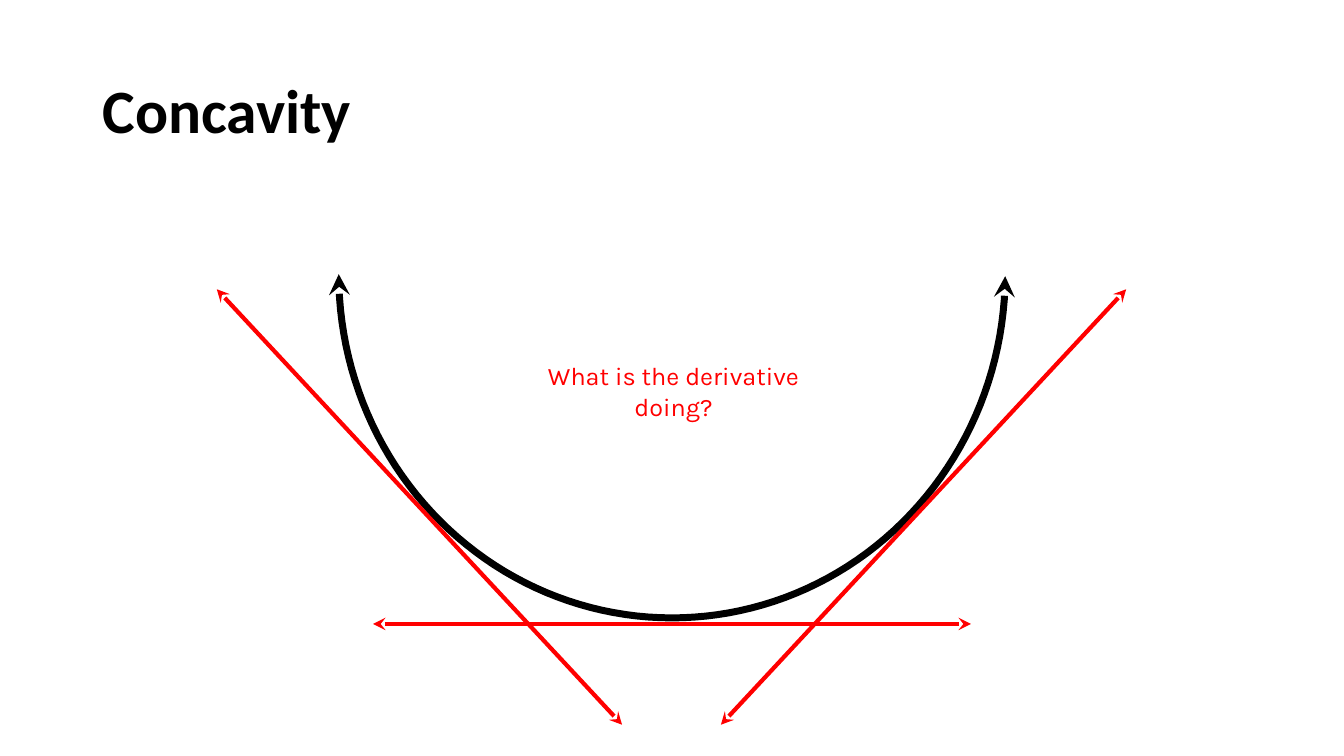
import math

import lxml.etree
import pptx
import pptx.dml.color
import pptx.enum.shapes
import pptx.enum.text
import pptx.oxml.ns
import pptx.util

Inches = pptx.util.Inches
BLACK = pptx.dml.color.RGBColor(0x00, 0x00, 0x00)
RED = pptx.dml.color.RGBColor(0xFF, 0x00, 0x00)

TITLE_FONT = {"name": "Calibri", "size": pptx.util.Pt(44), "bold": True}
QUESTION_FONT = {"name": "Karla", "size": pptx.util.Pt(18), "bold": False}

# Tangent lines inside the diagram box: (x1, y1, x2, y2)
TANGENTS = [
    (0, 0.15, 4.02, 4.47),
    (9.02, 0.15, 5.0, 4.47),
    (1.55, 3.47, 7.48, 3.47),
]


def add_text(slide, box, text, font_format, color, frame_format, paragraph_format):
    text_box = slide.shapes.add_textbox(*map(Inches, box))
    frame = text_box.text_frame
    paragraph = frame.paragraphs[0]
    run = paragraph.add_run()
    run.text = text
    run.font.color.rgb = color
    for target, values in (
        (frame, {"word_wrap": True, **frame_format}),
        (paragraph, paragraph_format),
        (run.font, font_format),
    ):
        for name, value in values.items():
            setattr(target, name, value)


def style_double_arrow(shape, color, width):
    shape.line.color.rgb = color
    shape.line.width = pptx.util.Pt(width)
    properties = shape.element.spPr
    outline = properties.find(pptx.oxml.ns.qn("a:ln"))
    for end in ("a:headEnd", "a:tailEnd"):
        lxml.etree.SubElement(outline, pptx.oxml.ns.qn(end), type="stealth")
    if properties.find(pptx.oxml.ns.qn("a:effectLst")) is None:
        lxml.etree.SubElement(properties, pptx.oxml.ns.qn("a:effectLst"))


def add_curve(slide, box, steps=90):
    """Draw the lower half of an ellipse that fills the box, right to left."""
    left, top, width, height = box
    start = math.radians(0.34)
    angles = [start + (math.pi - start) * step / steps for step in range(steps + 1)]
    points = [
        (
            Inches(left + width / 2 * (1 + math.cos(angle))),
            Inches(top + height * math.sin(angle)),
        )
        for angle in angles
    ]
    builder = slide.shapes.build_freeform(*points[0])
    builder.add_line_segments(points[1:], close=False)
    curve = builder.convert_to_shape()
    curve.fill.background()
    style_double_arrow(curve, BLACK, 5)


def add_diagram(slide, left, top):
    # Concave-up curve
    add_curve(slide, (left + 1.21, top, 6.61, 3.41))

    # Question inside the curve
    add_text(
        slide, (left + 2.82, top + 0.81, 3.42, 0.4),
        "What is the derivative doing?", QUESTION_FONT, RED,
        {"auto_size": pptx.enum.text.MSO_AUTO_SIZE.SHAPE_TO_FIT_TEXT},
        {"alignment": pptx.enum.text.PP_ALIGN.CENTER},
    )

    # Tangent lines
    for x1, y1, x2, y2 in TANGENTS:
        tangent = slide.shapes.add_connector(
            pptx.enum.shapes.MSO_CONNECTOR.STRAIGHT,
            Inches(left + x1), Inches(top + y1),
            Inches(left + x2), Inches(top + y2),
        )
        style_double_arrow(tangent, RED, 3)


def add_title(slide, box):
    add_text(
        slide, box, "Concavity", TITLE_FONT, BLACK,
        {"vertical_anchor": pptx.enum.text.MSO_ANCHOR.MIDDLE},
        {"line_spacing": 0.9},
    )


def main():
    presentation = pptx.Presentation()
    presentation.slide_width = Inches(13.33)
    presentation.slide_height = Inches(7.5)
    slide = presentation.slides.add_slide(presentation.slide_layouts[6])
    add_title(slide, (0.92, 0.4, 11.5, 1.45))
    add_diagram(slide, 2.15, 2.72)
    presentation.save("out.pptx")


if __name__ == "__main__":
    main()
